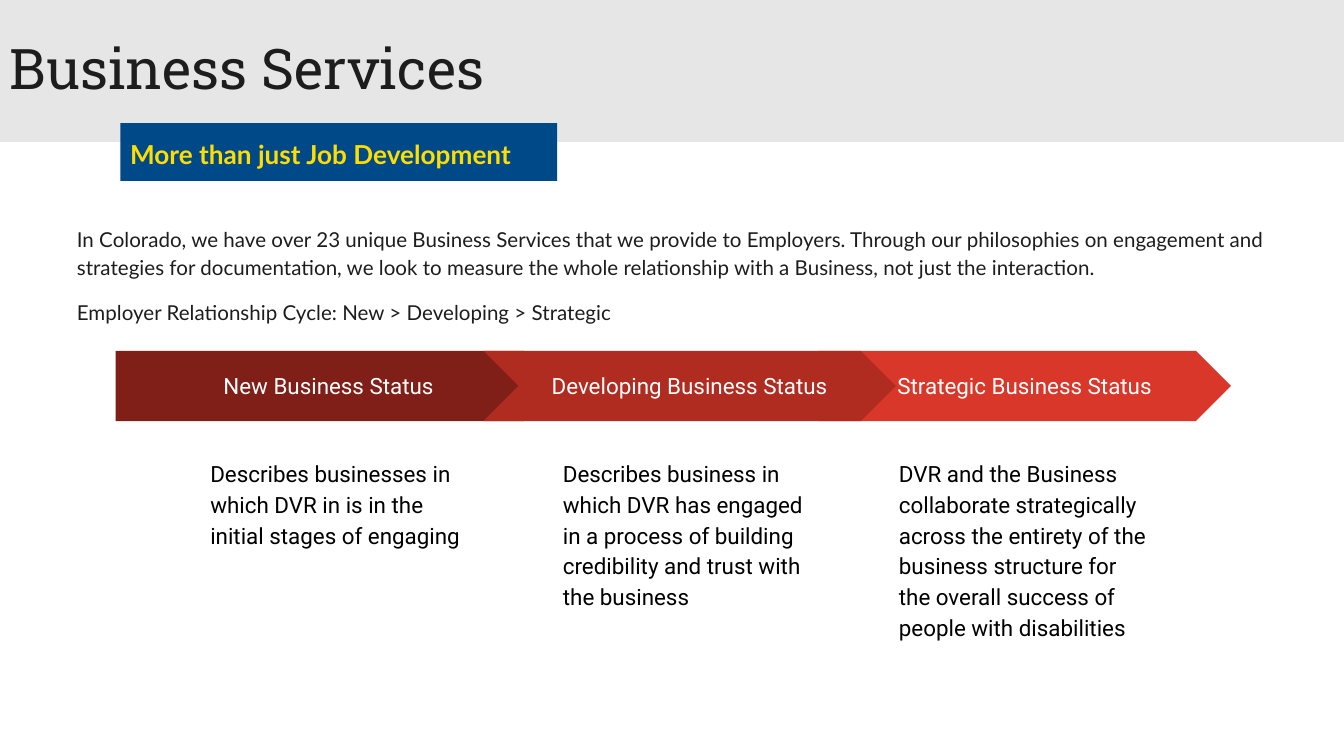
from pptx import Presentation
from pptx.dml.color import RGBColor
from pptx.enum.shapes import MSO_SHAPE as Shape
from pptx.enum.text import MSO_ANCHOR as Anchor, PP_ALIGN as Align
from pptx.util import Pt

COLORS = {
    "band": "E7E6E6", "ink": "1D1D1D", "blue": "004989", "yellow": "FFDD00",
    "new": "801F17", "developing": "B02B20", "strategic": "D83729",
    "white": "FFFFFF", "black": "000000",
}
WIDE_MARGINS = (7.2, 7.2)
BODY_MARGINS = (5.2, 2.6)
ARROW_TOP, ARROW_HEIGHT = 188, 37.6
NOTE_TOP, NOTE_WIDTH, NOTE_HEIGHT = 237, 150, 148

INTRO = [
    "In Colorado, we have over 23 unique Business Services that we provide to "
    "Employers. Through our philosophies on engagement and strategies for "
    "documentation, we look to measure the whole relationship with a Business, "
    "not just the interaction.",
    "Employer Relationship Cycle: New > Developing > Strategic",
]
# Back to front: color, outline, arrow left, arrow width, note left, label, note
STAGES = [
    ("strategic", Shape.CHEVRON, 438.5, 221, 474.5, "Strategic Business Status",
     "DVR and the Business collaborate strategically across the entirety of the "
     "business structure for the overall success of people with disabilities"),
    ("new", Shape.PENTAGON, 62, 237.6, 105.6, "New Business Status",
     "Describes businesses in which DVR in is in the initial stages of engaging"),
    ("developing", Shape.CHEVRON, 259, 221, 294.5, "Developing Business Status",
     "Describes business in which DVR has engaged in a process of building "
     "credibility and trust with the business"),
]


def rgb(name):
    return RGBColor.from_string(COLORS[name])


def write(box, texts, font, size, color, margins, anchor=Anchor.TOP,
          align=Align.LEFT, line=1.15, gap=0, bold=False):
    """Fill a box with paragraphs of one style; gap separates them."""
    frame = box.text_frame
    frame.word_wrap = True
    frame.vertical_anchor = anchor
    frame.margin_left = frame.margin_right = Pt(margins[0])
    frame.margin_top = frame.margin_bottom = Pt(margins[1])
    for index, text in enumerate(texts):
        para = frame.add_paragraph() if index else frame.paragraphs[0]
        para.text = text
        para.alignment = align
        para.line_spacing = line
        if index:
            para.space_before = Pt(gap)
        para.font.name = font
        para.font.size = Pt(size)
        para.font.bold = bold
        para.font.color.rgb = rgb(color)


def add_shape(shapes, kind, left, top, width, height, fill):
    shape = shapes.add_shape(kind, Pt(left), Pt(top), Pt(width), Pt(height))
    shape.shadow.inherit = False
    shape.fill.solid()
    shape.fill.fore_color.rgb = rgb(fill)
    shape.line.fill.background()
    return shape


def add_text(shapes, left, top, width, height, texts, *style, **options):
    box = shapes.add_textbox(Pt(left), Pt(top), Pt(width), Pt(height))
    write(box, texts, *style, **options)


def add_stage(page, color, kind, left, width, note_left, label, note):
    """Group a labelled arrow with the note under it."""
    shapes = page.shapes.add_group_shape().shapes
    arrow = add_shape(shapes, kind, left, ARROW_TOP, width, ARROW_HEIGHT, color)
    write(arrow, [label], "Roboto", 12, "white", WIDE_MARGINS,
          anchor=Anchor.MIDDLE, align=Align.CENTER, line=1.0)
    add_text(shapes, note_left, NOTE_TOP, NOTE_WIDTH, NOTE_HEIGHT, [note],
             "Roboto", 12, "black", WIDE_MARGINS)


def main():
    deck = Presentation()
    deck.slide_width, deck.slide_height = Pt(720), Pt(405)
    page = deck.slides.add_slide(deck.slide_layouts[6])

    title = add_shape(page.shapes, Shape.RECTANGLE, 0, 0, 720, 76, "band")
    write(title, ["Business Services"], "Roboto Slab", 30, "ink", BODY_MARGINS,
          anchor=Anchor.MIDDLE, line=0.9)
    subtitle = add_shape(page.shapes, Shape.RECTANGLE, 64.5, 66, 234, 31, "blue")
    write(subtitle, ["More than just Job Development"], "Lato", 14, "yellow",
          BODY_MARGINS, anchor=Anchor.MIDDLE, bold=True)
    add_text(page.shapes, 36, 117, 650, 235, INTRO, "Lato", 11, "ink",
             BODY_MARGINS, gap=9)
    for stage in STAGES:
        add_stage(page, *stage)

    deck.save("out.pptx")


if __name__ == "__main__":
    main()
